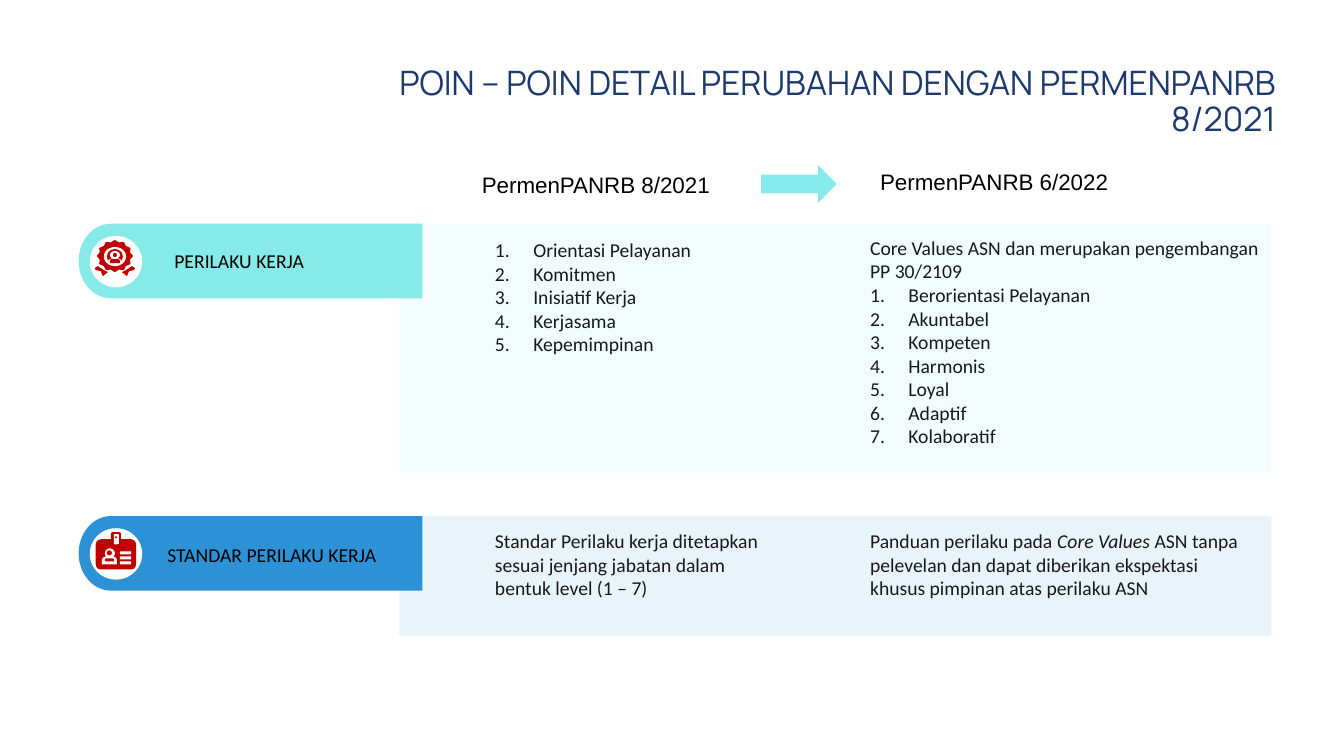
from math import cos, pi, sin

from lxml.etree import SubElement
from pptx import Presentation
from pptx.dml.color import RGBColor
from pptx.enum.shapes import MSO_SHAPE
from pptx.enum.text import PP_ALIGN
from pptx.oxml.ns import qn
from pptx.util import Inches, Pt

COLORS = {
    "navy": "1D3A6E", "aqua": "86EAE9", "arrow": "86EBEA", "blue": "2C92D5",
    "red": "C00000", "white": "FFFFFF", "black": "000000", "ink": "191919",
}
TITLE = "POIN – POIN DETAIL PERUBAHAN DENGAN PERMENPANRB 8/2021"
HEADS = [("PermenPANRB 8/2021", 4.68, 1.65), ("PermenPANRB 6/2022", 8.63, 1.62)]

# top, band height, colour, label, label left, label drop
ROWS = [
    (2.22, 2.47, "aqua", "PERILAKU KERJA", 1.73, 0.25),
    (5.12, 1.19, "blue", "STANDAR PERILAKU KERJA", 1.66, 0.27),
]

# box, lead runs (text, italic), numbered points
CELLS = [
    ((4.91, 2.36, 2.16, 1.41), [],
     ["Orientasi Pelayanan", "Komitmen", "Inisiatif Kerja", "Kerjasama",
      "Kepemimpinan"]),
    ((8.63, 2.34, 3.97, 2.36),
     [("Core Values ASN dan merupakan pengembangan PP 30/2109", False)],
     ["Berorientasi Pelayanan", "Akuntabel", "Kompeten", "Harmonis", "Loyal",
      "Adaptif", "Kolaboratif"]),
    ((4.91, 5.25, 2.67, 1.18),
     [("Standar Perilaku kerja ditetapkan sesuai jenjang jabatan dalam "
       "bentuk level (1 – 7)", False)], []),
    ((8.63, 5.25, 3.77, 1.18),
     [("Panduan perilaku pada ", False), ("Core Values ", True),
      ("ASN tanpa pelevelan dan dapat diberikan ekspektasi khusus pimpinan "
       "atas perilaku ASN", False)], []),
]

RECT, OVAL = MSO_SHAPE.RECTANGLE, MSO_SHAPE.OVAL
ROUND, DOME = MSO_SHAPE.ROUNDED_RECTANGLE, MSO_SHAPE.ROUND_2_SAME_RECTANGLE
BADGE = [
    (OVAL, "white", 1.03, 2.45, 0.22, 0.19),
    (OVAL, "red", 1.06, 2.47, 0.16, 0.15),
    (OVAL, "white", 1.09, 2.49, 0.1, 0.08),
    (OVAL, "red", 1.12, 2.51, 0.04, 0.04),
    (OVAL, "white", 1.07, 2.56, 0.14, 0.07),
    (DOME, "red", 1.09, 2.57, 0.1, 0.04),
]
CARD = [
    (ROUND, "red", 0.95, 5.35, 0.4, 0.3),
    (ROUND, "red", 1.1, 5.28, 0.1, 0.14),
    (ROUND, "white", 1.13, 5.3, 0.05, 0.1),
    (OVAL, "red", 1.14, 5.32, 0.02, 0.02),
    (OVAL, "white", 1.04, 5.44, 0.1, 0.1),
    (DOME, "white", 1.01, 5.52, 0.15, 0.08),
    (OVAL, "red", 1.06, 5.46, 0.05, 0.05),
    (DOME, "red", 1.04, 5.54, 0.09, 0.03),
] + [(ROUND, "white", 1.19, 5.47 + 0.05 * i, 0.11, 0.03) for i in range(3)]
RIBBON = [(0.17, 0.1), (0.2, 0.12), (0.19, 0.14), (0.14, 0.15), (0.12, 0.2),
          (0.07, 0.16), (0.11, 0.14)]
SEAL = (1.14, 2.54)

deck = Presentation()
deck.slide_width, deck.slide_height = Inches(13.33), Inches(7.5)
slide = deck.slides.add_slide(deck.slide_layouts[6])
shapes = slide.shapes


def paint(shape, color):
    shape.shadow.inherit = False
    shape.fill.solid()
    shape.fill.fore_color.rgb = RGBColor.from_string(COLORS[color])
    shape.line.fill.background()
    return shape


def draw(kind, color, *box):
    shape = paint(shapes.add_shape(kind, *map(Inches, box)), color)
    if kind == DOME:
        shape.adjustments[0] = 0.5
    return shape


def outline(points, color):
    spots = [(Inches(x), Inches(y)) for x, y in points]
    form = shapes.build_freeform(*spots[0], scale=1.0)
    form.add_line_segments(spots[1:], close=True)
    return paint(form.convert_to_shape(), color)


def ring(center, wide, high, start, end, steps):
    """Points along an ellipse, with angles in radians."""
    turns = [start + (end - start) * i / steps for i in range(steps + 1)]
    return [(center[0] + wide * cos(t), center[1] + high * sin(t)) for t in turns]


def write(box, paras, size, font, color, inset=0, space=None):
    """Fill a text box; each paragraph is (runs, numbered)."""
    frame = shapes.add_textbox(*map(Inches, box)).text_frame
    frame.word_wrap = True
    frame.margin_left = frame.margin_right = Inches(inset)
    frame.margin_top = frame.margin_bottom = Inches(inset / 2)
    for i, (runs, numbered) in enumerate(paras):
        para = frame.add_paragraph() if i else frame.paragraphs[0]
        if space:
            para.line_spacing = space
        if numbered:
            props = para._p.get_or_add_pPr()
            props.set("marL", str(Inches(0.38)))
            props.set("indent", str(-Inches(0.38)))
            SubElement(props, qn("a:buFont"), typeface="+mj-lt")
            SubElement(props, qn("a:buAutoNum"), type="arabicPeriod")
        para.font.size, para.font.name = Pt(size), font
        para.font.color.rgb = RGBColor.from_string(COLORS[color])
        for text, italic in runs:
            run = para.add_run()
            run.text = text
            if italic:
                run.font.italic = True
    return frame


title = write((3.34, 0.61, 9.41, 1.39), [([(TITLE, False)], False)],
              24, "Manrope", "navy", 0.1, 0.9)
title.paragraphs[0].alignment = PP_ALIGN.RIGHT

for top, high, color, label, left, drop in ROWS:
    band = draw(RECT, color, 3.96, top, 8.65, high)
    tint = band.fill._xPr.find(qn("a:solidFill"))[0]
    SubElement(tint, qn("a:alpha"), val="10000")
    cap = ring((1.1, top + 0.37), 0.32, 0.37, -pi / 2, -3 * pi / 2, 24)
    outline([(4.19, top)] + cap + [(4.19, top + 0.74)], color)
    draw(OVAL, "white", 0.89, top + 0.12, 0.52, 0.51)
    write((left, top + drop, 2.54, 0.24), [([(label, False)], False)],
          14, "Calibri", "black", space=Pt(16.8))

for box, lead, points in CELLS:
    paras = [(lead, False)] if lead else []
    paras += [([(point, False)], True) for point in points]
    write(box, paras, 14, "Calibri", "ink", space=Pt(16.8))

tips = ring(SEAL, 0.18, 0.16, 0, 2 * pi, 24)[::2]
dips = ring(SEAL, 0.155, 0.14, 0, 2 * pi, 24)[1::2]
outline([spot for pair in zip(tips, dips) for spot in pair], "red")
for side in (-1, 1):
    outline([(SEAL[0] + side * x, SEAL[1] + y) for x, y in RIBBON], "red")
for part in BADGE + CARD:
    draw(*part)

for text, left, top in HEADS:
    write((left, top, 2.61, 0.37), [([(text, False)], False)],
          16, "Arial", "black", 0.1)
draw(MSO_SHAPE.RIGHT_ARROW, "arrow", 7.55, 1.64, 0.75, 0.37)

deck.save("out.pptx")
